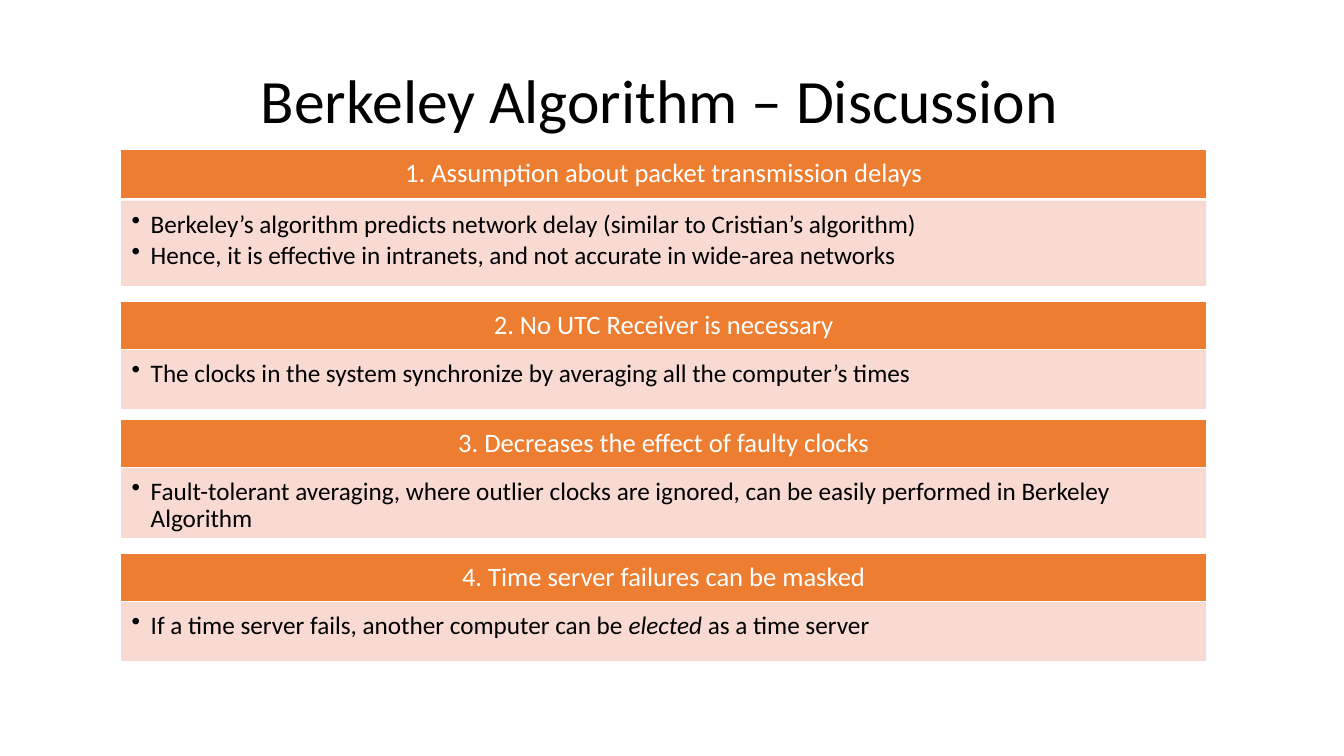
import pptx
import pptx.util
import pptx.dml.color
import pptx.enum.shapes
import pptx.enum.text
import pptx.oxml
import pptx.oxml.ns
from dataclasses import dataclass

Cm = pptx.util.Cm
Pt = pptx.util.Pt
Align = pptx.enum.text.PP_ALIGN
Anchor = pptx.enum.text.MSO_ANCHOR


@dataclass(frozen=True)
class Theme:
    font: str = "Calibri"
    ink: str = "000000"
    paper: str = "FFFFFF"
    band: str = "ED7D31"
    panel: str = "F8D7CE"
    panel_opacity: int = 90
    title_size: int = 44
    band_size: int = 19
    body_size: int = 18


THEME = Theme()
BAND_HEIGHT = 1.17
BAND_INSETS = (0.38, 0.2, 0.38, 0.2)
PANEL_INSETS = (0.25, 0.25, 0.36, 0.41)
BULLET_INDENT = 0.48

SECTIONS = [
    (3.81, 1.27, 2.11, "1. Assumption about packet transmission delays", [
        [("Berkeley’s algorithm predicts network delay (similar to Cristian’s algorithm)", False)],
        [("Hence, it is effective in intranets, and not accurate in wide-area networks", False)],
    ]),
    (7.62, 1.22, 1.45, "2. No UTC Receiver is necessary", [
        [("The clocks in the system synchronize by averaging all the computer’s times", False)],
    ]),
    (10.59, 1.22, 1.73, "3. Decreases the effect of faulty clocks", [
        [("Fault-tolerant averaging, where outlier clocks are ignored, "
          "can be easily performed in Berkeley Algorithm", False)],
    ]),
    (13.97, 1.22, 1.45, "4. Time server failures can be masked", [
        [("If a time server fails, another computer can be ", False),
         ("elected", True),
         (" as a time server", False)],
    ]),
]


def apply(target, values):
    for name, value in values.items():
        setattr(target, name, value)


def rgb(colour):
    return pptx.dml.color.RGBColor.from_string(colour)


def child(parent, tag, **attributes):
    element = pptx.oxml.ns.qn(tag)
    node = parent.makeelement(element, attributes)
    parent.append(node)
    return node


def place(shape, box):
    apply(shape, dict(zip(("left", "top", "width", "height"), map(Cm, box))))


def write(para, spans, size, colour):
    for text, italic in spans:
        span = para.add_run()
        span.text = text
        apply(span.font, {"name": THEME.font, "size": Pt(size), "italic": italic})
        span.font.color.rgb = rgb(colour)


def add_block(page, box, colour, insets, anchor, opacity=100):
    block = page.shapes.add_shape(
        pptx.enum.shapes.MSO_SHAPE.RECTANGLE, *map(Cm, box))
    block.shadow.inherit = False
    block.line.width = Pt(1)
    block.fill.solid()
    block.line.fill.solid()
    for paint in (block.fill, block.line.fill):
        paint.fore_color.rgb = rgb(colour)
    if opacity < 100:
        for tint in block.element.spPr.iter(pptx.oxml.ns.qn("a:srgbClr")):
            child(tint, "a:alpha", val=str(opacity * 1000))
    frame = block.text_frame
    apply(frame, {"word_wrap": True, "vertical_anchor": anchor})
    sides = ("margin_left", "margin_top", "margin_right", "margin_bottom")
    apply(frame, dict(zip(sides, map(Cm, insets))))
    return frame


def add_title(page, box, text):
    title = page.shapes.title
    place(title, box)
    apply(title.text_frame, {"word_wrap": True, "vertical_anchor": Anchor.MIDDLE})
    para = title.text_frame.paragraphs[0]
    apply(para, {"alignment": Align.CENTER, "line_spacing": 0.9})
    write(para, [(text, False)], THEME.title_size, THEME.ink)


def add_band(page, box, heading):
    frame = add_block(page, box, THEME.band, BAND_INSETS, Anchor.MIDDLE)
    para = frame.paragraphs[0]
    apply(para, {"alignment": Align.CENTER, "line_spacing": 0.9})
    write(para, [(heading, False)], THEME.band_size, THEME.paper)


def add_panel(page, box, points):
    frame = add_block(page, box, THEME.panel, PANEL_INSETS, Anchor.TOP,
                      THEME.panel_opacity)
    for index, spans in enumerate(points):
        para = frame.add_paragraph() if index else frame.paragraphs[0]
        apply(para, {"alignment": Align.LEFT, "level": 1, "line_spacing": 0.9,
                     "space_after": Pt(2.7)})
        settings = para._p.get_or_add_pPr()
        settings.set("marL", str(Cm(BULLET_INDENT)))
        settings.set("indent", str(-Cm(BULLET_INDENT)))
        child(settings, "a:buChar", char="•")
        write(para, spans, THEME.body_size, THEME.ink)


def add_section(page, box, gap, heading, points):
    left, top, width, height = box
    add_band(page, (left, top, width, BAND_HEIGHT), heading)
    add_panel(page, (left, top + gap, width, height - gap), points)


def main():
    deck = pptx.Presentation()
    apply(deck, {"slide_width": Cm(33.87), "slide_height": Cm(19.05)})
    page = deck.slides.add_slide(deck.slide_layouts.get_by_name("Title Only"))
    add_title(page, (4.88, 0.76, 23.5, 3.68), "Berkeley Algorithm – Discussion")
    for top, gap, panel_height, heading, points in SECTIONS:
        box = (3.07, top, 27.31, gap + panel_height)
        add_section(page, box, gap, heading, points)
    deck.save("out.pptx")


if __name__ == "__main__":
    main()
